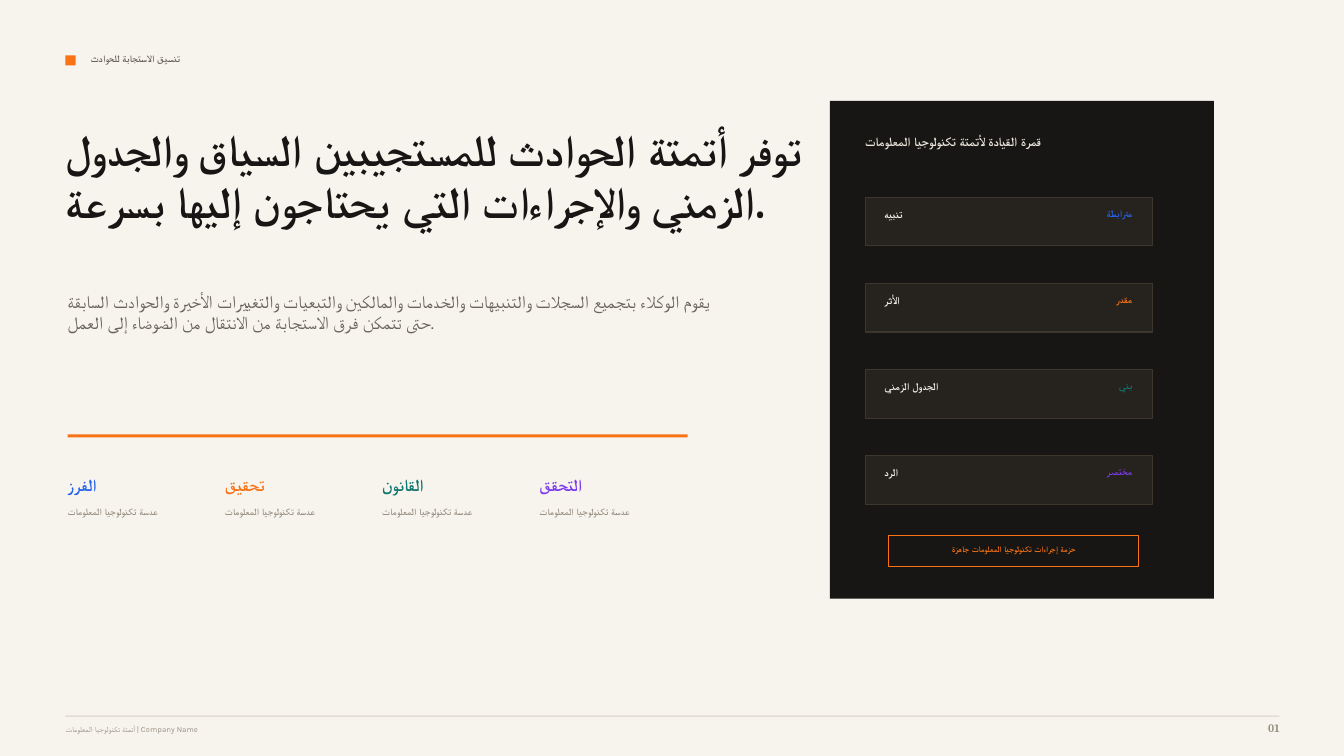
from pptx import Presentation
from pptx.dml.color import RGBColor
from pptx.enum.shapes import MSO_SHAPE
from pptx.enum.text import PP_ALIGN
from pptx.util import Inches, Pt

RECT = MSO_SHAPE.RECTANGLE
LEFT, CENTER, RIGHT = PP_ALIGN.LEFT, PP_ALIGN.CENTER, PP_ALIGN.RIGHT
HEADING, BODY = "Cambria", "Karla"

PAPER, INK, GRAY, MUTED = "F7F4EE", "171614", "69635A", "9A9184"
BLUE, ORANGE, TEAL, VIOLET = "2563EB", "F97316", "0F766E", "7C3AED"
ACCENTS = (BLUE, ORANGE, TEAL, VIOLET)

STAGES = ("الفرز", "تحقيق", "القانون", "التحقق")
STAGE_NOTE = "عدسة تكنولوجيا المعلومات"
STATUS_ROWS = (
    ("تنبيه", "مترابطة"),
    ("الأثر", "مقدر"),
    ("الجدول الزمني", "بني"),
    ("الرد", "مختصر"),
)


def rgb(color):
    return RGBColor.from_string(color)


def add_box(s, x, y, w, h, fill=None, line=None):
    box = s.shapes.add_shape(RECT, Inches(x), Inches(y), Inches(w), Inches(h))
    box.shadow.inherit = False
    if fill:
        box.fill.solid()
        box.fill.fore_color.rgb = rgb(fill)
    else:
        box.fill.background()
    if line:
        box.line.color.rgb = rgb(line)
        box.line.width = Pt(0.75)
    else:
        box.line.fill.background()


def add_text(s, text, x, y, w, h, size, color, font=BODY, bold=True, align=LEFT):
    tf = s.shapes.add_textbox(Inches(x), Inches(y), Inches(w), Inches(h)).text_frame
    tf.margin_left = tf.margin_right = tf.margin_top = tf.margin_bottom = 0
    tf.word_wrap = True
    p = tf.paragraphs[0]
    p.text = text
    p.alignment = align
    p.font.name = font
    p.font.size = Pt(size)
    p.font.bold = bold
    p.font.color.rgb = rgb(color)


def add_stage(s, x, name, color):
    add_text(s, name, x, 4.71, 1.25, 0.21, 12, color, font=HEADING)
    add_text(s, STAGE_NOTE, x, 5.02, 1.15, 0.17, 6.8, MUTED)


def add_status_row(s, y, label, status, color):
    add_box(s, 8.58, y, 2.85, 0.48, fill="26231F", line="3C362E")
    add_text(s, label, 8.77, y + 0.1, 1.35, 0.17, 7.5, PAPER)
    add_text(s, status, 10.23, y + 0.1, 1, 0.17, 7.1, color, align=RIGHT)


def main():
    prs = Presentation()
    prs.slide_width, prs.slide_height = Inches(13.33), Inches(7.5)
    s = prs.slides.add_slide(prs.slide_layouts[6])

    # Background and section label
    add_box(s, 0, 0, 13.33, 7.5, fill=PAPER)
    add_box(s, 0.65, 0.55, 0.1, 0.1, fill=ORANGE)
    add_text(s, "تنسيق الاستجابة للحوادث", 0.9, 0.52, 6.46, 0.19, 7.1, GRAY)

    # Headline and summary
    add_text(s, "توفر أتمتة الحوادث للمستجيبين السياق والجدول الزمني "
             "والإجراءات التي يحتاجون إليها بسرعة.",
             0.65, 1.21, 7.71, 1.31, 31.5, INK, font=HEADING)
    add_text(s, "يقوم الوكلاء بتجميع السجلات والتنبيهات والخدمات والمالكين والتبعيات "
             "والتغييرات الأخيرة والحوادث السابقة حتى تتمكن فرق الاستجابة من "
             "الانتقال من الضوضاء إلى العمل.",
             0.67, 2.88, 6.46, 0.92, 12.8, GRAY, bold=False)

    # Stages under the orange rule
    add_box(s, 0.67, 4.31, 6.15, 0.03, fill=ORANGE)
    for i, (name, color) in enumerate(zip(STAGES, ACCENTS)):
        add_stage(s, 0.67 + 1.56 * i, name, color)

    # Cockpit panel
    add_box(s, 8.23, 1, 3.81, 4.94, fill=INK)
    add_text(s, "قمرة القيادة لأتمتة تكنولوجيا المعلومات",
             8.58, 1.33, 2.29, 0.25, 9, "EDE7DD")
    for i, ((label, status), color) in enumerate(zip(STATUS_ROWS, ACCENTS)):
        add_status_row(s, 1.96 + 0.854 * i, label, status, color)
    add_box(s, 8.81, 5.31, 2.48, 0.31, line=ORANGE)
    add_text(s, "حزمة إجراءات تكنولوجيا المعلومات جاهزة",
             8.94, 5.4, 2.23, 0.14, 6, ORANGE, align=CENTER)

    # Footer
    add_box(s, 0.65, 7.1, 12.04, 0.01, fill="D9D0C3")
    add_text(s, "أتمتة تكنولوجيا المعلومات | Company Name",
             0.65, 7.19, 7.92, 0.15, 5.6, MUTED, bold=False)
    add_text(s, "01", 12.19, 7.15, 0.5, 0.19, 8.2, MUTED, font=HEADING, align=RIGHT)

    prs.save("out.pptx")


if __name__ == "__main__":
    main()
